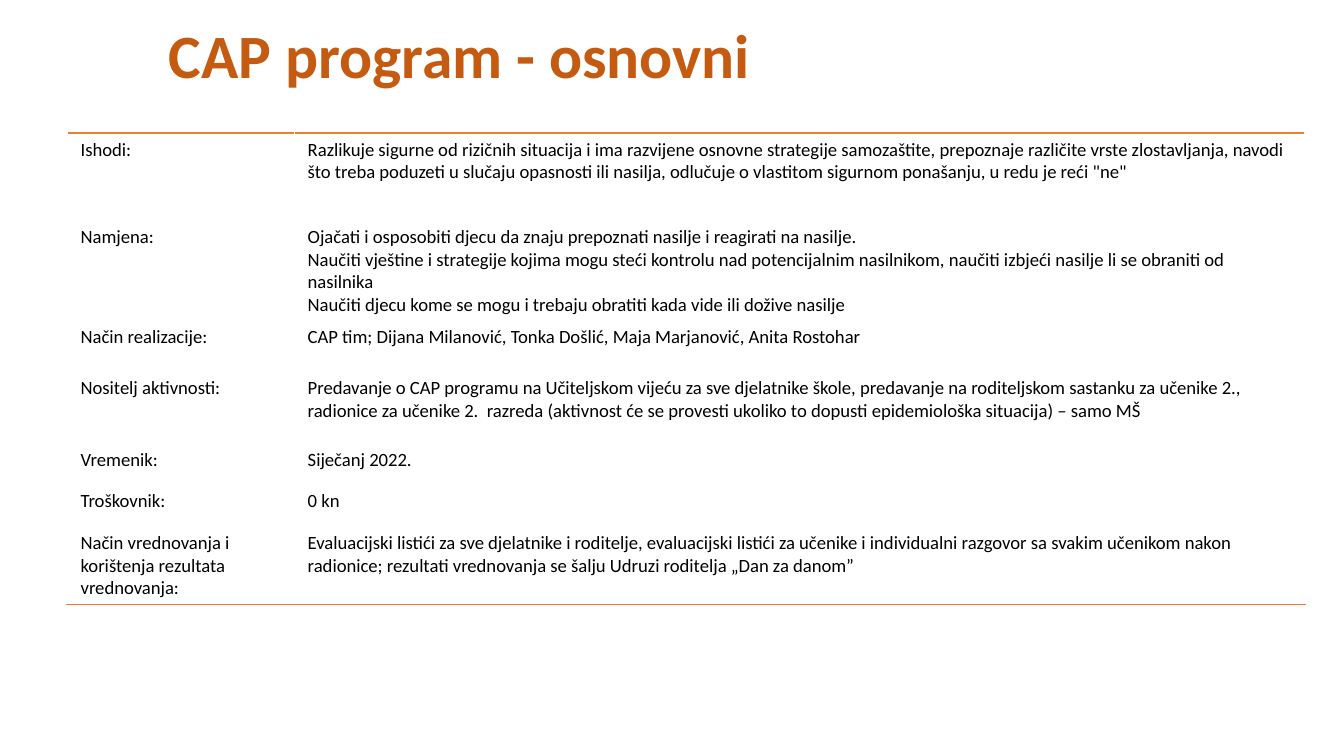
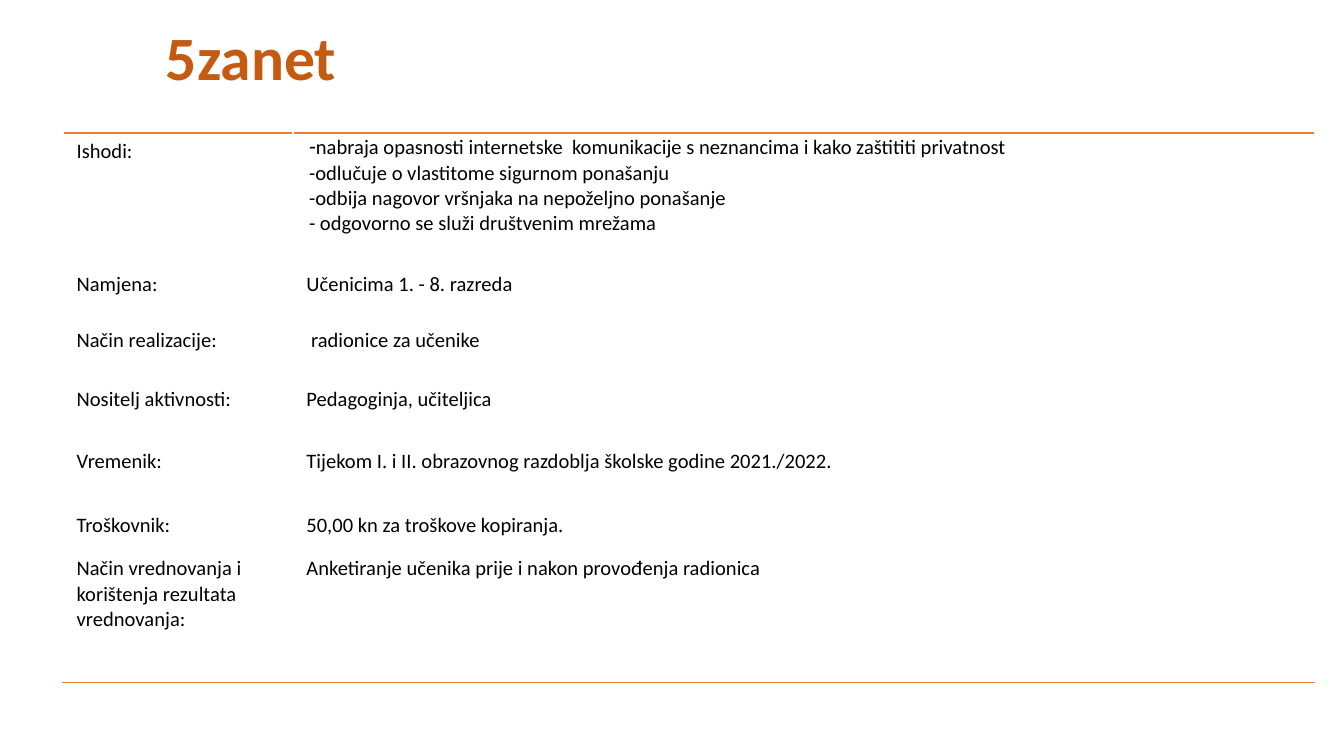
from dataclasses import dataclass
from typing import Optional

from lxml.etree import SubElement
from pptx import Presentation
from pptx.dml.color import RGBColor as RGB
from pptx.enum.text import MSO_ANCHOR as Anchor
from pptx.oxml.ns import qn
from pptx.util import Inches, Pt

# Shared look; the grid has 100 columns, and rows as high as columns are wide
COLORS = {"title": "C55A11", "rule": "ED7D31", "text": "000000"}
FONT = "Calibri"
WIDTH = Inches(10)
HEIGHT = WIDTH * 9 // 16
UNIT = WIDTH / 100
TOP = 9.9
LABELS = ["Ishodi:", "Namjena:", "Način realizacije:", "Nositelj aktivnosti:",
          "Vremenik:", "Troškovnik:",
          "Način vrednovanja i korištenja rezultata vrednovanja:"]


@dataclass
class Entry:
    high: float
    lines: list[str]
    pad: tuple[float, float] = (1, 0.4)
    lead: Optional[int] = None  # size of the first character


@dataclass
class Plan:
    title: str
    box: tuple[float, float, float, float]
    left: float
    cols: tuple[float, float]
    size: int
    rows: list[Entry]


PLANS = [
    Plan("CAP program - osnovni", (11.8, -0.3, 86.2, 9.3), 5, (16.9, 75.2), 10, [
        Entry(6.5, ["Razlikuje sigurne od rizičnih situacija i ima razvijene osnovne "
                    "strategije samozaštite, prepoznaje različite vrste zlostavljanja, "
                    "navodi što treba poduzeti u slučaju opasnosti ili nasilja, "
                    "odlučuje o vlastitom sigurnom ponašanju, u redu je reći \"ne\""]),
        Entry(6.8, ["Ojačati i osposobiti djecu da znaju prepoznati nasilje i reagirati "
                    "na nasilje.",
                    "Naučiti vještine i strategije kojima mogu steći kontrolu nad "
                    "potencijalnim nasilnikom, naučiti izbjeći nasilje li se obraniti "
                    "od nasilnika",
                    "Naučiti djecu kome se mogu i trebaju obratiti kada vide ili dožive "
                    "nasilje"]),
        Entry(3.8, ["CAP tim; Dijana Milanović, Tonka Došlić, Maja Marjanović, "
                    "Anita Rostohar"]),
        Entry(5.3, ["Predavanje o CAP programu na Učiteljskom vijeću za sve djelatnike "
                    "škole, predavanje na roditeljskom sastanku za učenike 2., "
                    "radionice za učenike 2.  razreda (aktivnost će se provesti ukoliko "
                    "to dopusti epidemiološka situacija) – samo MŠ"]),
        Entry(3.1, ["Siječanj 2022."]),
        Entry(3.1, ["0 kn"]),
        Entry(5.8, ["Evaluacijski listići za sve djelatnike i roditelje, evaluacijski "
                    "listići za učenike i individualni razgovor sa svakim učenikom "
                    "nakon radionice; rezultati vrednovanja se šalju Udruzi roditelja "
                    "„Dan za danom”"]),
    ]),
    Plan("5zanet", (11.6, 0.1, 86.2, 8.8), 4.7, (17.1, 76), 11, [
        Entry(9.9, ["-nabraja opasnosti internetske  komunikacije s neznancima i kako "
                    "zaštititi privatnost",
                    "-odlučuje o vlastitome sigurnom ponašanju",
                    "-odbija nagovor vršnjaka na nepoželjno ponašanje",
                    "- odgovorno se služi društvenim mrežama"], (1.2, 0), 12),
        Entry(4.2, ["Učenicima 1. - 8. razreda"]),
        Entry(4.4, [" radionice za učenike"]),
        Entry(4.6, ["Pedagoginja, učiteljica"]),
        Entry(4.8, ["Tijekom I. i II. obrazovnog razdoblja školske godine 2021./2022."]),
        Entry(3.2, ["50,00 kn za troškove kopiranja."]),
        Entry(9.8, ["Anketiranje učenika prije i nakon provođenja radionica"]),
    ]),
]


def grid(*cells: float) -> list[int]:
    return [round(n * UNIT) for n in cells]


def style(para, size: int, color: str, bold: bool = False) -> None:
    font = para.font
    font.name, font.size, font.bold = FONT, Pt(size), bold
    font.color.rgb = RGB.from_string(COLORS[color])


def inset(item, across: float, down: float) -> None:
    item.margin_left = item.margin_right = grid(across)[0]
    item.margin_top = item.margin_bottom = grid(down)[0]


def rule(cell, side: str) -> None:
    line = SubElement(cell._tc.get_or_add_tcPr(), qn(f"a:{side}"), w=str(Pt(1)))
    fill = SubElement(line, qn("a:solidFill"))
    SubElement(fill, qn("a:srgbClr"), val=COLORS["rule"])


def put_title(slide, plan: Plan) -> None:
    frame = slide.shapes.add_textbox(*grid(*plan.box)).text_frame
    frame.word_wrap = True
    frame.vertical_anchor = Anchor.MIDDLE
    inset(frame, 0.75, 0.4)
    para = frame.paragraphs[0]
    para.text = plan.title
    para.line_spacing = 0.9
    style(para, 33, "title", True)


def put_cell(cell, lines: list[str], size: int, pad: tuple[float, float],
             lead: Optional[int] = None) -> None:
    inset(cell, *pad)
    cell.fill.background()
    frame = cell.text_frame
    for i, line in enumerate(lines):
        para = frame.add_paragraph() if i else frame.paragraphs[0]
        if lead and not i:
            run = para.add_run()
            run.text, line = line[0], line[1:]
            run.font.size = Pt(lead)
        para.add_run().text = line
        style(para, size, "text")


def put_table(slide, plan: Plan) -> None:
    high = sum(row.high for row in plan.rows)
    area = grid(plan.left, TOP, sum(plan.cols), high)
    table = slide.shapes.add_table(len(plan.rows), 2, *area).table
    table.first_row = table.horz_banding = False
    for col, wide in zip(table.columns, grid(*plan.cols)):
        col.width = wide
    for row, label, entry in zip(table.rows, LABELS, plan.rows):
        row.height = grid(entry.high)[0]
        name, body = row.cells
        put_cell(name, [label], plan.size, (1, 0.4))
        put_cell(body, entry.lines, plan.size, entry.pad, entry.lead)
    # Rules above the first row and below the last
    for row, side in ((0, "lnT"), (len(plan.rows) - 1, "lnB")):
        for col in range(2):
            cell = table.cell(row, col)
            rule(cell, side)
            # The fill must follow the border
            cell.fill.solid()
            cell.fill.background()


def main() -> None:
    deck = Presentation()
    deck.slide_width, deck.slide_height = WIDTH, HEIGHT
    for plan in PLANS:
        slide = deck.slides.add_slide(deck.slide_layouts[6])
        put_title(slide, plan)
        put_table(slide, plan)
    deck.save("out.pptx")


if __name__ == "__main__":
    main()
